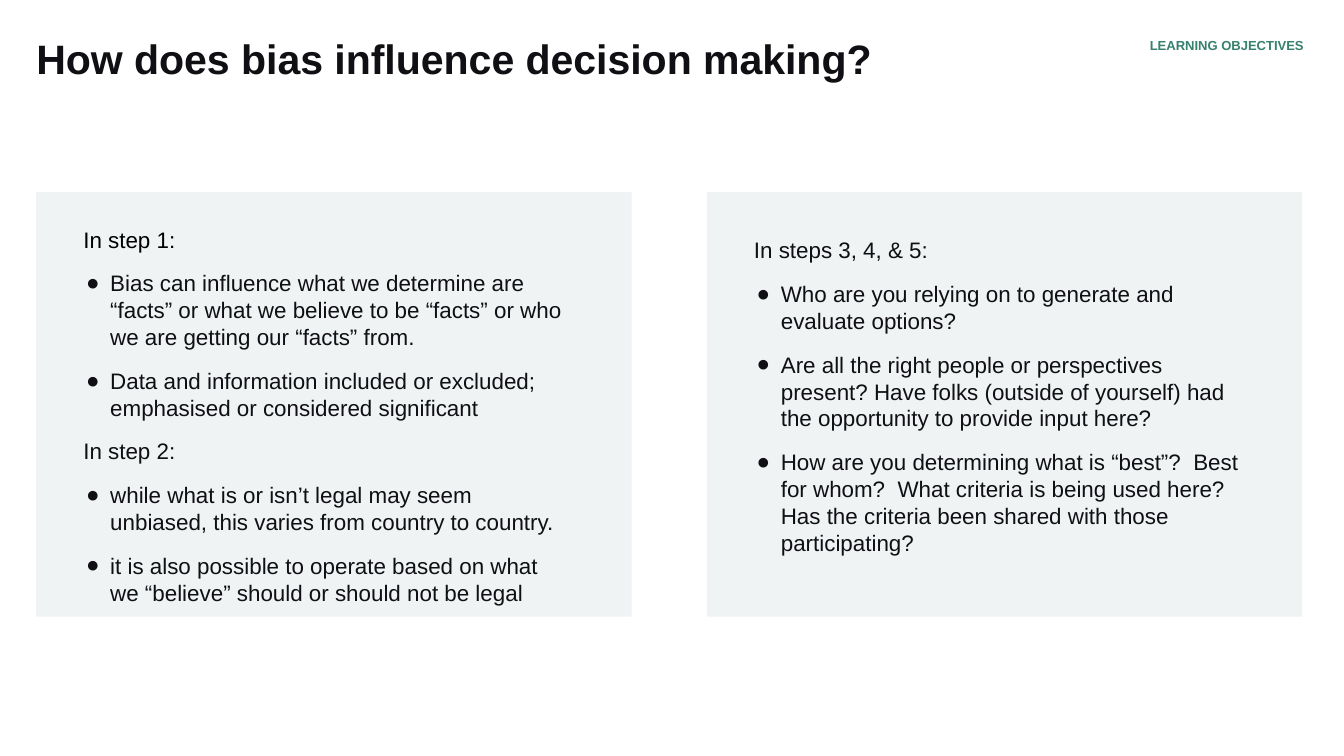
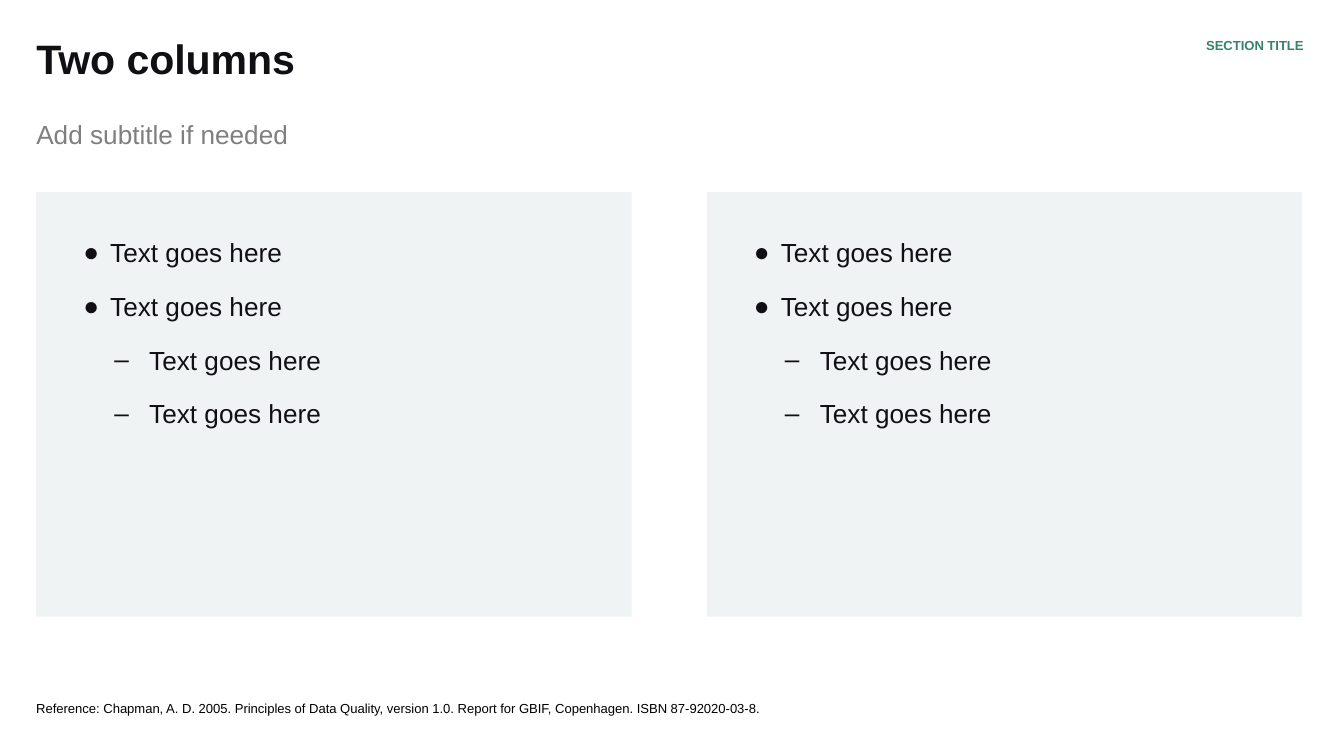
"""Build two slides, each with a title, a section tag and two text panels."""
from lxml import etree
from pptx import Presentation
from pptx.dml.color import RGBColor
from pptx.enum.shapes import MSO_SHAPE
from pptx.enum.text import MSO_ANCHOR, MSO_AUTO_SIZE, PP_ALIGN
from pptx.oxml.ns import qn
from pptx.util import Inches, Pt

RECT = MSO_SHAPE.RECTANGLE
TOP, BOTTOM = MSO_ANCHOR.TOP, MSO_ANCHOR.BOTTOM
LEFT, RIGHT = PP_ALIGN.LEFT, PP_ALIGN.RIGHT
NO_FIT = MSO_AUTO_SIZE.NONE

FONT = "Arial"
INK, BLACK, GREEN, GRAY, PANEL = "0F0F14", "000000", "37816E", "7F7F7F", "F0F3F3"

HEADING, BULLET, DASH = range(3)
SAMPLE = [
    (BULLET, "Text goes here"),
    (BULLET, "Text goes here"),
    (DASH, "Text goes here"),
    (DASH, "Text goes here"),
]
SLIDES = [
    {
        "title": "How does bias influence decision making?",
        "tag": "LEARNING OBJECTIVES",
        "size": 12, "gap": 9, "hang": 0.18, "lifts": (0.08, 0),
        "columns": [
            [
                (HEADING, "In step 1:", BLACK),
                (BULLET, "Bias can influence what we determine are “facts” or what we "
                         "believe to be “facts” or who we are getting our “facts” from."),
                (BULLET, "Data and information included or excluded; emphasised or "
                         "considered significant"),
                (HEADING, "In step 2:"),
                (BULLET, "while what is or isn’t legal may seem unbiased, this varies "
                         "from country to country."),
                (BULLET, "it is also possible to operate based on what we “believe” "
                         "should or should not be legal"),
            ],
            [
                (HEADING, "In steps 3, 4, & 5:"),
                (BULLET, "Who are you relying on to generate and evaluate options?"),
                (BULLET, "Are all the right people or perspectives present? Have folks "
                         "(outside of yourself) had the opportunity to provide input here?"),
                (BULLET, "How are you determining what is “best”?  Best for whom?  What "
                         "criteria is being used here?  Has the criteria been shared "
                         "with those participating?"),
            ],
        ],
    },
    {
        "title": "Two columns",
        "tag": "SECTION TITLE",
        "subtitle": "Add subtitle if needed",
        "reference": "Reference: Chapman, A. D. 2005. Principles of Data Quality, "
                     "version 1.0. Report for GBIF, Copenhagen. ISBN 87-92020-03-8.",
        "size": 14, "gap": 12, "hang": 0.2, "lifts": (0, 0),
        "columns": [SAMPLE, SAMPLE],
    },
]

WIDTH = 10
HEIGHT = WIDTH * 9 / 16
MARGIN, TITLE_TOP = 0.27, 0.29
PANEL_TOP, PANEL_W, PANEL_H = 1.43, 4.43, 3.16
PITCH = 4.99
PAD_X, PAD_Y = 0.35, 0.23
BODY_W, BODY_H = 3.72, 2.56


def color(value):
    return RGBColor.from_string(value)


def place(sp, box):
    sp.left, sp.top, sp.width, sp.height = map(Inches, box)


def frame(sp, insets, anchor=TOP):
    tf = sp.text_frame
    tf.word_wrap = True
    tf.auto_size = NO_FIT
    tf.vertical_anchor = anchor
    tf.margin_left, tf.margin_top, tf.margin_right, tf.margin_bottom = map(Inches, insets)
    return tf


def write(p, text, size=12, fill=INK, bold=False, align=LEFT, line=1.0, before=0):
    p.alignment = align
    p.line_spacing = line
    p.space_before = Pt(before)
    p.space_after = Pt(0)
    r = p.add_run()
    r.text = text
    r.font.name = FONT
    r.font.size = Pt(size)
    r.font.bold = bold
    r.font.color.rgb = color(fill)


def set_bullet(p, char, margin, hang):
    pPr = p._p.get_or_add_pPr()
    pPr.set("marL", str(Inches(margin)))
    pPr.set("indent", str(-Inches(hang)))
    if not char:
        etree.SubElement(pPr, qn("a:buNone"))
        return
    clr = etree.SubElement(pPr, qn("a:buClr"))
    etree.SubElement(clr, qn("a:srgbClr"), val=INK)
    etree.SubElement(pPr, qn("a:buFont"), typeface=FONT)
    etree.SubElement(pPr, qn("a:buChar"), char=char)


def add_label(slide, text, box, insets, anchor=TOP, **style):
    sp = slide.shapes.add_textbox(*map(Inches, box))
    write(frame(sp, insets, anchor).paragraphs[0], text, **style)


def add_panel(slide, left):
    sp = slide.shapes.add_shape(
        RECT, *map(Inches, (left, PANEL_TOP, PANEL_W, PANEL_H)))
    sp.shadow.inherit = False
    sp.fill.solid()
    sp.fill.fore_color.rgb = color(PANEL)
    sp.line.fill.background()
    slide.shapes._spTree.insert(2, sp._element)


def fill_column(sp, items, data):
    markers = {
        HEADING: ("", 0, 0),
        BULLET: ("●", 0.2, data["hang"]),
        DASH: ("–", 0.49, 0.26),
    }
    tf = frame(sp, (0, 0.1, 0.1, 0.1))
    for i, (kind, text, *fill) in enumerate(items):
        p = tf.add_paragraph() if i else tf.paragraphs[0]
        p.level = 1 if kind == DASH else 0
        set_bullet(p, *markers[kind])
        write(p, text, size=data["size"], fill=fill[0] if fill else INK,
              before=data["gap"] if i else 0)


def build_slide(prs, data):
    slide = prs.slides.add_slide(prs.slide_layouts[3])
    title, *bodies = slide.placeholders
    place(title, (MARGIN, TITLE_TOP, 7.99, 0.59))
    write(frame(title, (0, 0, 0.1, 0.1)).paragraphs[0], data["title"],
          size=22, bold=True, line=0.9)
    for i, (body, items) in enumerate(zip(bodies, data["columns"])):
        left = MARGIN + i * PITCH
        add_panel(slide, left)
        place(body, (left + PAD_X, PANEL_TOP + PAD_Y - data["lifts"][i], BODY_W, BODY_H))
        fill_column(body, items, data)
    add_label(slide, data["tag"], (7.57, TITLE_TOP, 2.13, 0.16), (0, 0, 0, 0.1),
              size=7, fill=GREEN, bold=True, align=RIGHT, line=0.9)
    if "subtitle" in data:
        add_label(slide, data["subtitle"], (MARGIN, 0.88, 7.09, 0.47),
                  (0, 0, 0.1, 0.1), size=14, fill=GRAY)
    if "reference" in data:
        add_label(slide, data["reference"], (MARGIN, 4.9, 8.4, 0.43),
                  (0, 0, 0.1, 0), BOTTOM, size=7, fill=BLACK)


def main():
    prs = Presentation()
    prs.slide_width, prs.slide_height = Inches(WIDTH), Inches(HEIGHT)
    for data in SLIDES:
        build_slide(prs, data)
    prs.save("out.pptx")


if __name__ == "__main__":
    main()
